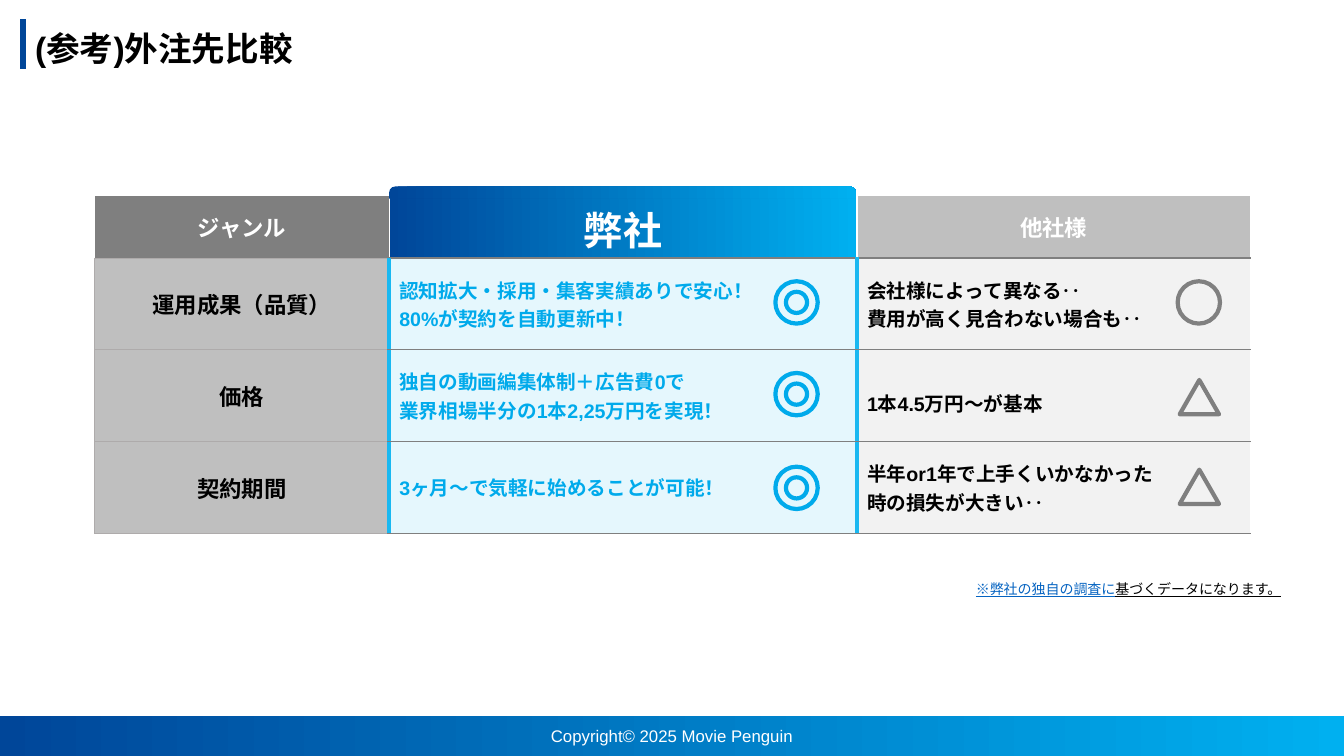
from lxml import etree
from pptx import Presentation
from pptx.dml.color import RGBColor
from pptx.enum import shapes, text
from pptx.oxml import ns
from pptx.util import Inches, Pt

NAVY, SKY, CYAN, EDGE = "004699", "00B0F0", "00AAEB", "19B8F1"
WHITE, BLACK, GREY, SILVER = "FFFFFF", "000000", "7F7F7F", "BFBFBF"
GRADIENT = (NAVY, SKY)
SHAPE, ALIGN, ANCHOR = shapes.MSO_SHAPE, text.PP_ALIGN, text.MSO_ANCHOR

HEADERS = ["ジャンル", "弊社", "他社様"]
ROWS = [
    ("運用成果（品質）",
     ["認知拡大・採用・集客実績ありで安心！", "80%が契約を自動更新中！"],
     ["会社様によって異なる‥", "費用が高く見合わない場合も‥"]),
    ("価格",
     ["独自の動画編集体制＋広告費0で", "業界相場半分の1本2,25万円を実現！"],
     ["1本4.5万円〜が基本"]),
    ("契約期間",
     ["3ヶ月〜で気軽に始めることが可能！"],
     ["半年or1年で上手くいかなかった", "時の損失が大きい‥"]),
]


def color(value):
    return RGBColor.from_string(value)


def paint(fill, value):
    """Fill with one colour, a left-to-right gradient, or nothing."""
    if value is None:
        fill.background()
    elif isinstance(value, tuple):
        fill.gradient()
        fill.gradient_angle = 0
        for stop, stop_color in zip(fill.gradient_stops, value):
            stop.color.rgb = color(stop_color)
    else:
        fill.solid()
        fill.fore_color.rgb = color(value)


def add_run(paragraph, words, value, **formats):
    run = paragraph.add_run()
    run.text = words
    run.font.color.rgb = color(value)
    for name, setting in {"name": "Arial", **formats}.items():
        setattr(run.font, name, setting)


def add_shape(slide, kind, box, fill=None, line=None):
    shape = slide.shapes.add_shape(kind, *map(Inches, box))
    shape.shadow.inherit = False
    paint(shape.fill, fill)
    if line:
        shape.line.color.rgb = color(line)
        shape.line.width = Pt(3)
    else:
        shape.line.fill.background()
    return shape


def add_textbox(slide, box, anchor=ANCHOR.MIDDLE):
    frame = slide.shapes.add_textbox(*map(Inches, box)).text_frame
    frame.word_wrap = True
    frame.vertical_anchor = anchor
    return frame.paragraphs[0]


def set_borders(cell, borders):
    properties = cell._tc.get_or_add_tcPr()
    sides = [side for side in "LRTB" if side in borders]
    for index, side in enumerate(sides):
        value, width = borders[side]
        line = etree.Element(ns.qn(f"a:ln{side}"), w=str(Pt(width)))
        solid = etree.SubElement(line, ns.qn("a:solidFill"))
        etree.SubElement(solid, ns.qn("a:srgbClr"), val=value)
        properties.insert(index, line)


def fill_cell(cell, lines, fill, value, size, borders, align=ALIGN.LEFT,
              anchor=ANCHOR.MIDDLE, spacing=None):
    paint(cell.fill, fill)
    set_borders(cell, borders)
    cell.vertical_anchor = anchor
    frame = cell.text_frame
    for index, words in enumerate(lines):
        paragraph = frame.add_paragraph() if index else frame.paragraphs[0]
        paragraph.alignment = align
        paragraph.line_spacing = spacing
        add_run(paragraph, words, value, size=Pt(size), bold=True)


def add_title(slide, box):
    left, top, width, height = box
    x = Inches(left - 0.02)
    bar = slide.shapes.add_connector(shapes.MSO_CONNECTOR.STRAIGHT,
                                     x, Inches(top + 0.68), x, Inches(top + 0.19))
    bar.line.color.rgb = color(NAVY)
    bar.line.width = Pt(4.5)
    etree.SubElement(bar._element.spPr, ns.qn("a:effectLst"))
    paragraph = add_textbox(slide, box)
    paragraph.line_spacing = 0.9
    add_run(paragraph, "(参考)外注先比較", BLACK, size=Pt(24), bold=True)


def add_footer(slide, box):
    left, top, width, height = box
    add_shape(slide, SHAPE.RECTANGLE, box, GRADIENT)
    paragraph = add_textbox(slide, (left + (width - 4.5) / 2, top, 4.5, height))
    paragraph.alignment = ALIGN.CENTER
    add_run(paragraph, "Copyright© 2025 Movie Penguin", WHITE, size=Pt(12))


def add_comparison(slide, box):
    left, top, width, height = box
    frame = slide.shapes.add_table(4, 3, *map(Inches, box))
    table = frame.table
    table.first_row = table.horz_banding = False
    for column, column_width in zip(table.columns, (2.92, 4.64, 3.9)):
        column.width = Inches(column_width)
    for row, row_height in zip(table.rows, (0.62, 0.91, 0.91, 0.91)):
        row.height = Inches(row_height)

    # Header row
    pale, edge, rule = ("AEABAB", 0.75), (EDGE, 3), (GREY, 0.75)
    header_styles = [(GREY, 16, ANCHOR.MIDDLE, pale),
                     (GRADIENT, 28, ANCHOR.TOP, (GREY, 1)),
                     (SILVER, 16, ANCHOR.MIDDLE, (GREY, 1))]
    for index, (fill, size, anchor, bottom) in enumerate(header_styles):
        fill_cell(table.cell(0, index), [HEADERS[index]], fill, WHITE, size,
                  {"B": bottom}, ALIGN.CENTER, anchor)

    # Body rows
    for index, (label, ours, others) in enumerate(ROWS, 1):
        sides = {"L": edge, "T": (GREY, 1) if index == 1 else rule, "B": rule}
        fill_cell(table.cell(index, 0), [label], SILVER, BLACK, 16,
                  {"L": pale, "R": edge, "T": pale, "B": pale}, ALIGN.CENTER)
        fill_cell(table.cell(index, 1), ours, "E5F7FD", CYAN, 14,
                  {**sides, "R": edge})
        fill_cell(table.cell(index, 2), others, "F2F2F2", BLACK, 14, sides,
                  spacing=1.5 if len(others) == 1 else None)

    # Rounded cap over the highlighted column
    cap = add_shape(slide, SHAPE.ROUND_2_SAME_RECTANGLE,
                    (left + 2.92, top - 0.09, 4.63, 0.12), GRADIENT)
    cap.adjustments[0] = 0.5

    # Rating marks
    for offset in (0.85, 1.76, 2.69):
        for inset in (0.105, 0):
            size = 0.42 - 2 * inset
            add_shape(slide, SHAPE.OVAL, (left + 6.75 + inset, top + offset + inset,
                                          size, size), line=CYAN)
    add_shape(slide, SHAPE.OVAL, (left + 10.74, top + 0.85, 0.42, 0.42), line="808080")
    for offset in (1.83, 2.72):
        add_shape(slide, SHAPE.ISOSCELES_TRIANGLE,
                  (left + 10.76, top + offset, 0.39, 0.34), line=GREY)


def add_note(slide, box):
    paragraph = add_textbox(slide, box, ANCHOR.TOP)
    for words, value in (("※弊社の独自の調査に", "0563C1"),
                         ("基づくデータになります。", BLACK)):
        add_run(paragraph, words, value, size=Pt(10), underline=True)


def main():
    presentation = Presentation()
    presentation.slide_width = Inches(13.33)
    presentation.slide_height = Inches(7.5)
    slide = presentation.slides.add_slide(presentation.slide_layouts[6])
    add_footer(slide, (0, 7.1, 13.33, 0.4))
    add_title(slide, (0.25, 0, 3.38, 1))
    add_comparison(slide, (0.94, 1.94, 11.46, 3.35))
    add_note(slide, (9.58, 5.71, 3.32, 0.27))
    presentation.save("out.pptx")


if __name__ == "__main__":
    main()
